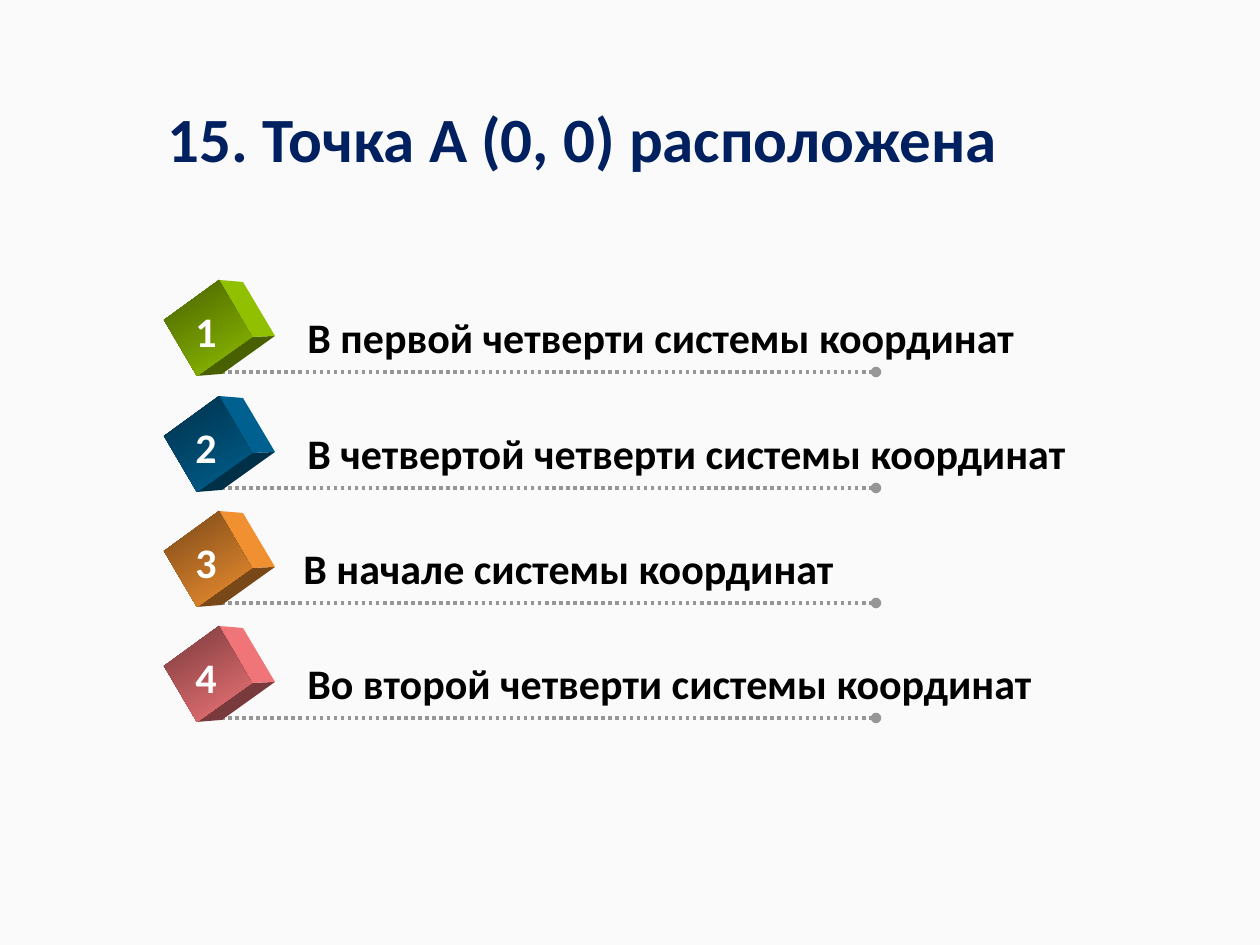
"""Build a quiz slide with four numbered answers beside coloured cubes."""
from lxml import etree
from pptx import Presentation
from pptx.dml.color import RGBColor
from pptx.enum.dml import MSO_LINE
from pptx.enum.shapes import MSO_CONNECTOR
from pptx.enum.text import MSO_ANCHOR, PP_ALIGN
from pptx.oxml.ns import qn
from pptx.util import Pt

STRAIGHT = MSO_CONNECTOR.STRAIGHT
DOTS = MSO_LINE.ROUND_DOT
TOP, MIDDLE = MSO_ANCHOR.TOP, MSO_ANCHOR.MIDDLE
LEFT, CENTER = PP_ALIGN.LEFT, PP_ALIGN.CENTER

QUESTION = "15. Точка А (0, 0) расположена"
ANSWERS = [
    ("В первой четверти системы координат", "green", 295, 775),
    ("В четвертой четверти системы координат", "blue", 295, 829),
    ("В начале системы координат", "orange", 291, 662),
    ("Во второй четверти системы координат", "pink", 295, 771),
]
COLORS = {
    "background": "FAFAFA", "title": "002060", "text": "000000",
    "number": "FFFFFF", "rule": "969696",
    "green": "99CC00", "blue": "006699", "orange": "FF9933", "pink": "FF7C80",
}
FRONT = [(164, 320), (219, 280), (252, 337), (197, 376)]
SIDE = [(219, 280), (243, 282), (275, 336), (252, 337)]
BASE = [(252, 337), (275, 336), (222, 374), (197, 376)]
LIGHT, DARK = 0.94, 0.47
ROW_PITCH = 115.5
EMU_PER_PX = 914400 / 126


def px(length):
    return round(length * EMU_PER_PX)


def shade(name, factor=1):
    return RGBColor(*(round(part * factor) for part in RGBColor.from_string(COLORS[name])))


def add_text(slide, text, box, color, size=24, align=LEFT, anchor=TOP, wrap=True, spacing=1.0):
    frame = slide.shapes.add_textbox(*map(px, box)).text_frame
    frame.word_wrap = wrap
    frame.vertical_anchor = anchor
    line = frame.paragraphs[0]
    line.alignment = align
    line.line_spacing = spacing
    run = line.add_run()
    run.text = text
    for key, value in {"name": "Calibri", "size": Pt(size), "bold": True}.items():
        setattr(run.font, key, value)
    run.font.color.rgb = shade(color)


def add_face(slide, corners, dy, color, first, last):
    points = [(px(x), px(y + dy)) for x, y in corners]
    builder = slide.shapes.build_freeform(*points[0])
    builder.add_line_segments(points[1:], close=True)
    face = builder.convert_to_shape()
    face.shadow.inherit = False
    face.line.fill.background()
    if first == last:
        face.fill.solid()
        face.fill.fore_color.rgb = shade(color, first)
    else:
        face.fill.gradient()
        face.fill.gradient_angle = 300
        for stop, position, factor in zip(face.fill.gradient_stops, (0, 1), (first, last)):
            stop.position = position
            stop.color.rgb = shade(color, factor)


def add_rule(slide, y):
    rule = slide.shapes.add_connector(STRAIGHT, px(214), px(y), px(876), px(y))
    rule.line.color.rgb = shade("rule")
    rule.line.width = Pt(2)
    rule.line.dash_style = DOTS
    properties = rule.line._get_or_add_ln()
    etree.SubElement(properties, qn("a:tailEnd"), type="oval")
    etree.SubElement(properties.getparent(), qn("a:effectLst"))


def main():
    deck = Presentation()
    deck.slide_width, deck.slide_height = px(1260), px(945)
    slide = deck.slides.add_slide(deck.slide_layouts[6])
    slide.background.fill.solid()
    slide.background.fill.fore_color.rgb = shade("background")
    add_text(slide, QUESTION, (91, 87, 984, 110), "title", 36, CENTER, MIDDLE, spacing=0.9)

    for index, (answer, color, left, width) in enumerate(ANSWERS):
        dy = round(index * ROW_PITCH)
        add_rule(slide, 372 + dy)
        add_face(slide, BASE, dy, color, DARK, DARK)
        add_face(slide, SIDE, dy, color, LIGHT, LIGHT)
        add_face(slide, FRONT, dy, color, DARK, LIGHT)
        add_text(slide, answer, (left, 305 + dy, width, 64), "text")
        add_text(slide, str(index + 1), (183, 299 + dy, 49, 63), "number", wrap=False)
    deck.save("out.pptx")


if __name__ == "__main__":
    main()
